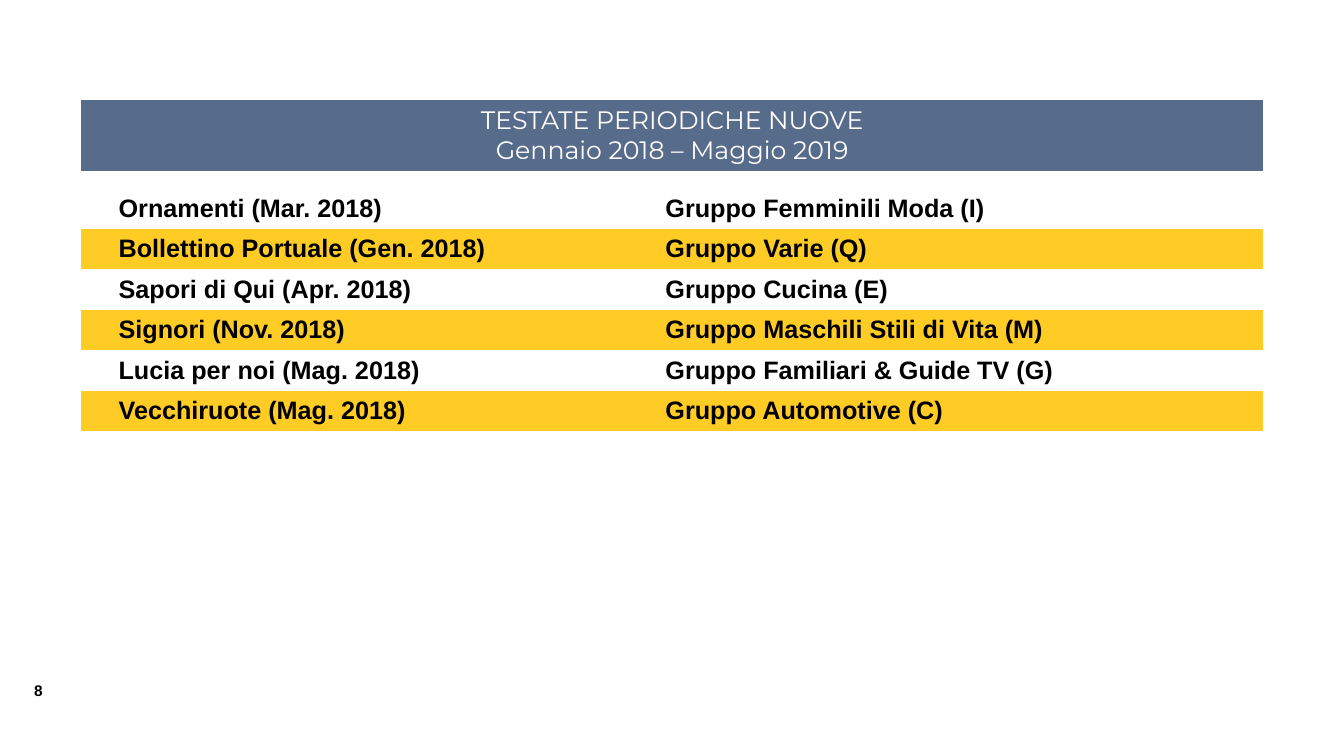
from lxml.etree import SubElement
from pptx import Presentation
from pptx.dml.color import RGBColor
from pptx.enum.text import MSO_ANCHOR, PP_ALIGN
from pptx.oxml.ns import qn
from pptx.util import Cm, Pt

TITLE = ["TESTATE PERIODICHE NUOVE", "Gennaio 2018 – Maggio 2019"]
TITLES = [
    ("Ornamenti (Mar. 2018)", "Gruppo Femminili Moda (I)"),
    ("Bollettino Portuale (Gen. 2018)", "Gruppo Varie (Q)"),
    ("Sapori di Qui (Apr. 2018)", "Gruppo Cucina (E)"),
    ("Signori (Nov. 2018)", "Gruppo Maschili Stili di Vita (M)"),
    ("Lucia per noi (Mag. 2018)", "Gruppo Familiari & Guide TV (G)"),
    ("Vecchiruote (Mag. 2018)", "Gruppo Automotive (C)"),
]
PAGE = "8"
EMPTY_ROWS = 4
COLORS = {"header": "576B8A", "band": "FFCB25", "white": "FFFFFF", "black": "000000"}
COLS = [14.48, 15.32]
HEADER_H, GAP_H, ROW_H = 1.79, 0.43, 1.02
INDENTS = [0.95, 0.25]
NO_STYLE = "{2D5ABB26-0587-4C30-8999-92F81FD0307C}"


def rgb(name):
    return RGBColor.from_string(COLORS[name])


def write(tf, lines, font, size, color, bold=False, align=PP_ALIGN.LEFT):
    tf.text = "\n".join(lines)
    for p in tf.paragraphs:
        p.alignment = align
        for r in p.runs:
            r.font.name = font
            r.font.size = Pt(size)
            r.font.bold = bold
            r.font.color.rgb = rgb(color)


def fill(cell, color):
    cell.fill.solid()
    cell.fill.fore_color.rgb = rgb(color)
    cell.vertical_anchor = MSO_ANCHOR.MIDDLE
    cell.margin_top = cell.margin_bottom = Cm(0.1)


def blank(cell):
    fill(cell, "white")
    cell.margin_top = cell.margin_bottom = 0
    SubElement(cell.text_frame.paragraphs[0]._p, qn("a:endParaRPr"), sz="800")


def main():
    prs = Presentation()
    prs.slide_width, prs.slide_height = Cm(33.87), Cm(19.05)
    s = prs.slides.add_slide(prs.slide_layouts[6])

    tf = s.shapes.add_textbox(Cm(0.61), Cm(17.04), Cm(1.07), Cm(0.74)).text_frame
    tf.word_wrap = False
    write(tf, [PAGE], "Arial", 11, "black", bold=True)

    heights = [HEADER_H, GAP_H] + [ROW_H] * (len(TITLES) + EMPTY_ROWS)
    tbl = s.shapes.add_table(len(heights), len(COLS), Cm(2.04), Cm(2.52),
                             Cm(sum(COLS)), Cm(sum(heights))).table
    tbl.first_row = tbl.horz_banding = False
    tbl._tbl.tblPr.find(qn("a:tableStyleId")).text = NO_STYLE
    for col, width in zip(tbl.columns, COLS):
        col.width = Cm(width)
    for row, height in zip(tbl.rows, heights):
        row.height = Cm(height)

    header = tbl.cell(0, 0)
    header.merge(tbl.cell(0, 1))
    fill(header, "header")
    write(header.text_frame, TITLE, "Montserrat", 18, "white", align=PP_ALIGN.CENTER)

    for i, texts in enumerate(TITLES):
        for j, text in enumerate(texts):
            cell = tbl.cell(i + 2, j)
            fill(cell, "band" if i % 2 else "white")
            cell.margin_left = Cm(INDENTS[j])
            write(cell.text_frame, [text], "Arial", 18, "black", bold=True)

    for i in [1, *range(len(TITLES) + 2, len(heights))]:
        for j in range(len(COLS)):
            blank(tbl.cell(i, j))

    prs.save("out.pptx")


if __name__ == "__main__":
    main()
